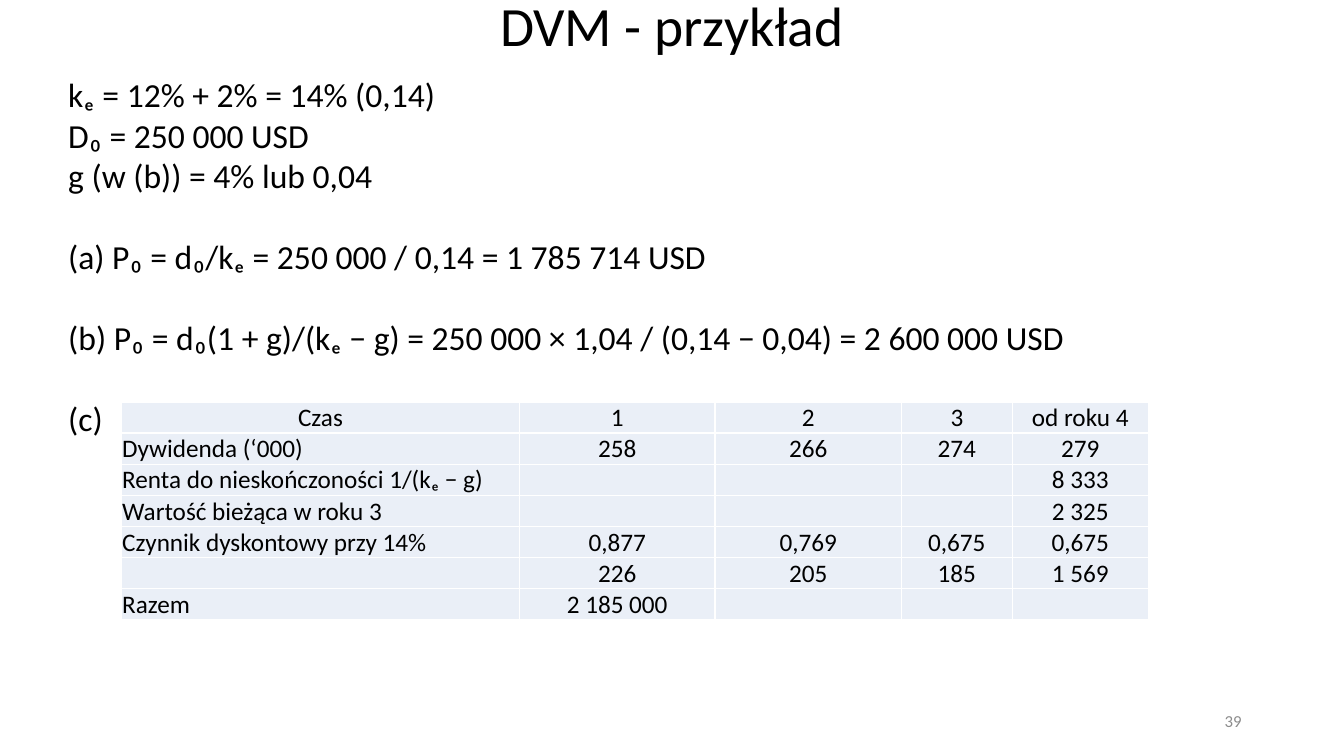
from lxml.etree import SubElement
from pptx import Presentation
from pptx.dml.color import RGBColor
from pptx.enum.text import MSO_ANCHOR as Anchor, PP_ALIGN as Align
from pptx.oxml.ns import qn
from pptx.util import Cm, Pt

TITLE = "DVM - przykład"
PAGE = "39"
# Each block is one paragraph; its lines are separated by line breaks
BLOCKS = [
    ["kₑ = 12% + 2% = 14% (0,14)", "D₀ = 250 000 USD", "g (w (b)) = 4% lub 0,04"],
    ["(a) P₀ = d₀/kₑ = 250 000 / 0,14 = 1 785 714 USD"],
    ["(b) P₀ = d₀(1 + g)/(kₑ − g) = 250 000 × 1,04 / (0,14 − 0,04) = 2 600 000 USD"],
    ["(c)"],
]
ROWS = [
    ("Czas", "1", "2", "3", "od roku 4"),
    ("Dywidenda (‘000)", "258", "266", "274", "279"),
    ("Renta do nieskończoności 1/(kₑ − g)", "", "", "", "8 333"),
    ("Wartość bieżąca w roku 3", "", "", "", "2 325"),
    ("Czynnik dyskontowy przy 14%", "0,877", "0,769", "0,675", "0,675"),
    ("", "226", "205", "185", "1 569"),
    ("Razem", "2 185 000", "", "", ""),
]
COL_WIDTHS = [10.03, 4.93, 4.7, 2.79, 3.43]
ROW_HEIGHT = 0.78
FONT = "Calibri"
COLORS = {"text": "000000", "page": "8C8C8C", "cell": "EAEFF7", "border": "FFFFFF"}


def add_run(p, text, size, color="text"):
    r = p.add_run()
    r.text = text
    r.font.name = FONT
    r.font.size = Pt(size)
    r.font.color.rgb = RGBColor.from_string(COLORS[color])


def add_box(slide, left, top, width, height, anchor=Anchor.TOP):
    sp = slide.shapes.add_textbox(Cm(left), Cm(top), Cm(width), Cm(height))
    tf = sp.text_frame
    tf.word_wrap = True
    tf.vertical_anchor = anchor
    return tf


def add_borders(cell):
    tc_pr = cell._tc.get_or_add_tcPr()
    for side in ("a:lnL", "a:lnR", "a:lnT", "a:lnB"):
        line = SubElement(tc_pr, qn(side), w=str(Pt(1)))
        fill = SubElement(line, qn("a:solidFill"))
        SubElement(fill, qn("a:srgbClr"), val=COLORS["border"])


def fill_cell(cell, text, align, anchor):
    add_borders(cell)
    cell.fill.solid()
    cell.fill.fore_color.rgb = RGBColor.from_string(COLORS["cell"])
    cell.margin_left = cell.margin_right = cell.margin_top = Cm(0.02)
    cell.margin_bottom = 0
    cell.vertical_anchor = anchor
    p = cell.text_frame.paragraphs[0]
    p.alignment = align
    if text:
        add_run(p, text, 18)
    else:
        p.font.size = Pt(18)


def add_valuation_table(slide):
    frame = slide.shapes.add_table(
        len(ROWS), len(COL_WIDTHS), Cm(3.06), Cm(10.13),
        Cm(sum(COL_WIDTHS)), Cm(ROW_HEIGHT * len(ROWS)))
    table = frame.table
    for column, width in zip(table.columns, COL_WIDTHS):
        column.width = Cm(width)
    for i, row in enumerate(ROWS):
        table.rows[i].height = Cm(ROW_HEIGHT)
        anchor = Anchor.BOTTOM if row[0] == "Razem" else Anchor.MIDDLE
        for j, text in enumerate(row):
            align = Align.LEFT if i and j == 0 else Align.CENTER
            fill_cell(table.cell(i, j), text, align, anchor)


def main():
    prs = Presentation()
    prs.slide_width, prs.slide_height = Cm(33.87), Cm(19.05)
    slide = prs.slides.add_slide(prs.slide_layouts[6])

    p = add_box(slide, 2.33, 0, 29.21, 1.45, Anchor.MIDDLE).paragraphs[0]
    p.alignment = Align.CENTER
    p.line_spacing = 0.9
    add_run(p, TITLE, 39.6)

    p = add_box(slide, 23.92, 17.66, 7.62, 1.01, Anchor.MIDDLE).paragraphs[0]
    p.alignment = Align.RIGHT
    add_run(p, PAGE, 12, "page")

    tf = add_box(slide, 1.47, 1.75, 27.05, 9.5)
    for i, lines in enumerate(BLOCKS):
        p = tf.add_paragraph() if i else tf.paragraphs[0]
        p.space_before = Pt(29 if i else 0)
        for j, line in enumerate(lines):
            if j:
                p.add_line_break()
            add_run(p, line, 24)

    add_valuation_table(slide)
    prs.save("out.pptx")


if __name__ == "__main__":
    main()
